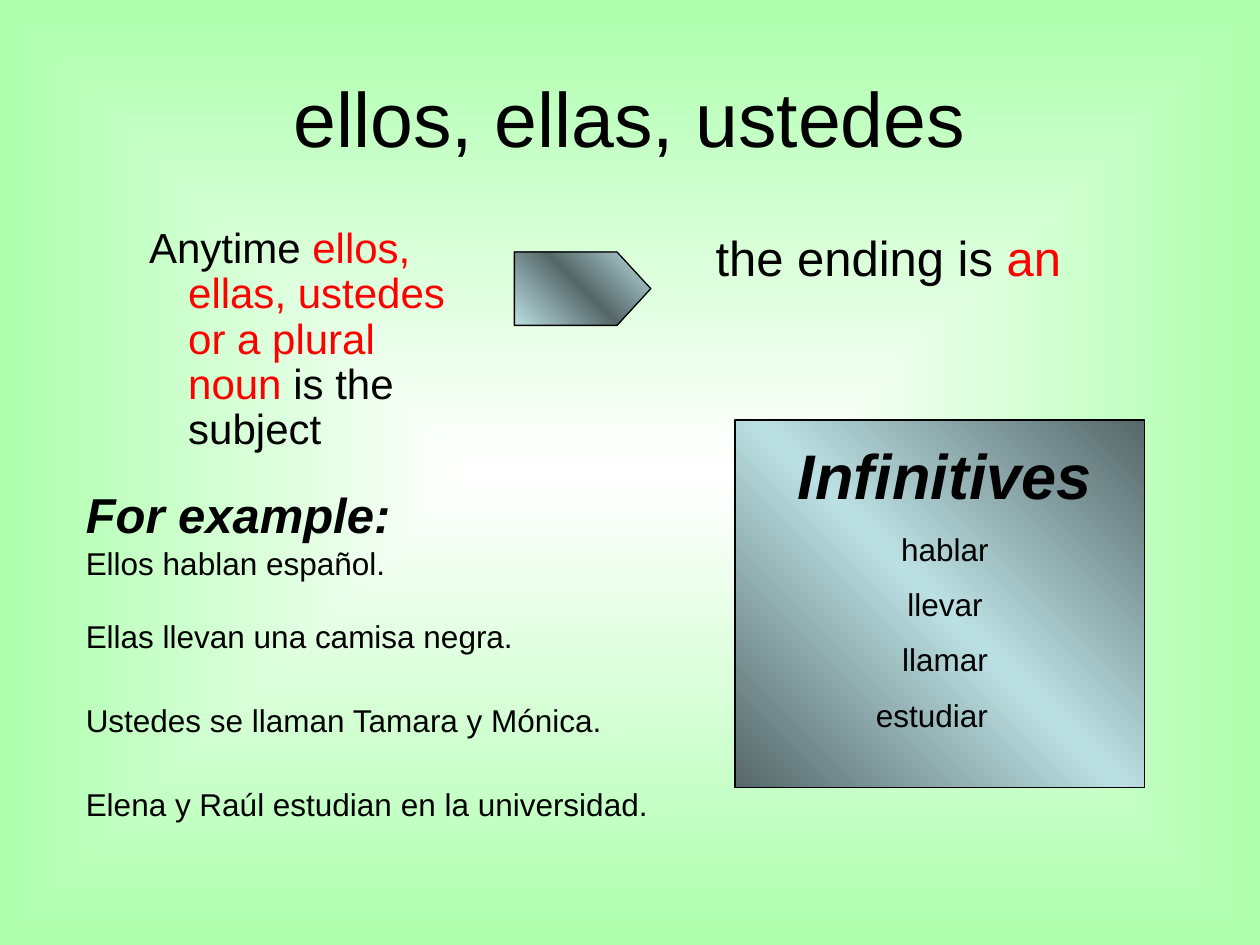
from lxml import etree
from pptx import Presentation
from pptx.dml.color import RGBColor
from pptx.enum.shapes import MSO_SHAPE
from pptx.enum.text import MSO_ANCHOR, MSO_AUTO_SIZE, PP_ALIGN
from pptx.oxml.ns import qn
from pptx.util import Cm, Pt

PENTAGON, RECT = MSO_SHAPE.PENTAGON, MSO_SHAPE.RECTANGLE
CENTER, LEFT = PP_ALIGN.CENTER, PP_ALIGN.LEFT
TOP, MIDDLE = MSO_ANCHOR.TOP, MSO_ANCHOR.MIDDLE
FIXED = MSO_AUTO_SIZE.NONE

FONT = "Arial"
BLACK, RED, WHITE, GREEN = "000000", "FF0000", "FFFFFF", "ADFFAD"
PALE, DARK = "BBE0E3", "566769"


def rgb(value):
    return RGBColor.from_string(value)


def place(shape, left, top, width, height):
    shape.left, shape.top = Cm(left), Cm(top)
    shape.width, shape.height = Cm(width), Cm(height)


def add_run(p, text, size, color=BLACK, strong=False):
    r = p.add_run()
    r.text = text
    r.font.name, r.font.size = FONT, Pt(size)
    r.font.color.rgb = rgb(color)
    r.font.bold = r.font.italic = strong


def set_gradient(fill, element, colors, from_center=False):
    """Evenly spaced stops, rising to the right or spreading from the centre."""
    fill.gradient()
    grad = element.find(".//" + qn("a:gradFill"))
    stops = grad.find(qn("a:gsLst"))
    for stop in list(stops):
        stops.remove(stop)
    for i, color in enumerate(colors):
        pos = 100000 * i // (len(colors) - 1)
        stop = etree.SubElement(stops, qn("a:gs"), pos=str(pos))
        etree.SubElement(stop, qn("a:srgbClr"), val=color)
    if from_center:
        grad.remove(grad.find(qn("a:lin")))
        shade = etree.SubElement(grad, qn("a:path"), path="rect")
        etree.SubElement(shade, qn("a:fillToRect"),
                         dict.fromkeys("ltrb", "50000"))
    else:
        fill.gradient_angle = 45


def add_panel(s, kind, box, colors):
    sp = s.shapes.add_shape(kind, *map(Cm, box))
    sp.shadow.inherit = False
    set_gradient(sp.fill, sp._element, colors)
    sp.line.color.rgb = rgb(BLACK)
    sp.line.width = Pt(0.75)
    return sp


def fill_body(sp, box, runs, size, spacing=None):
    """Body placeholder with one hanging paragraph and no bullet."""
    place(sp, *box)
    tf = sp.text_frame
    tf.auto_size, tf.vertical_anchor = FIXED, TOP
    p = tf.paragraphs[0]
    p.level = 1
    p.line_spacing = spacing
    pPr = p._p.get_or_add_pPr()
    pPr.set("marL", str(Cm(2.06)))
    pPr.set("indent", str(Cm(-0.79)))
    etree.SubElement(pPr, qn("a:buNone"))
    for text, color in runs:
        add_run(p, text, size, color)


def add_text(s, box, lines, align=LEFT, gap=0):
    """Text box; lines are (text, size, strong), with a gap between them."""
    tf = s.shapes.add_textbox(*map(Cm, box)).text_frame
    tf.word_wrap = True
    for i, line in enumerate(lines):
        p = tf.add_paragraph() if i else tf.paragraphs[0]
        p.alignment = align
        p.space_before = Pt(gap if i else 0)
        text, size, strong = line
        add_run(p, text, size, strong=strong)
    return tf


def main():
    prs = Presentation()
    prs.slide_width, prs.slide_height = Cm(25.4), Cm(19.05)
    s = prs.slides.add_slide(prs.slide_layouts[3])
    set_gradient(s.background.fill, s._element, [WHITE, GREEN], True)

    # Title
    title, rule, ending = s.placeholders
    place(title, 1.27, 0.76, 22.86, 3.18)
    title.text_frame.vertical_anchor = MIDDLE
    p = title.text_frame.paragraphs[0]
    p.alignment = CENTER
    add_run(p, "ellos, ellas, ustedes", 44)

    # Rule: subject, arrow, ending
    fill_body(rule, (1.48, 4.45, 8.26, 4.23),
              [("Anytime ", BLACK),
               ("ellos, ellas, ustedes or a plural noun", RED),
               (" is the subject", BLACK)], 24, 0.9)
    arrow = add_panel(s, PENTAGON, (10.37, 5.08, 2.75, 1.48),
                      [PALE, DARK, PALE])
    arrow.adjustments[0] = 0.46
    fill_body(ending, (12.9, 4.45, 11.23, 12.57),
              [("the ending is ", BLACK), ("an", RED)], 28)

    # Examples
    add_text(s, (1.48, 9.65, 19.48, 2.21),
             [("For example:", 28, True), ("Ellos hablan español.", 18, False)])
    sentences = ["Ellas llevan una camisa negra.",
                 "Ustedes se llaman Tamara y Mónica.",
                 "Elena y Raúl estudian en la universidad."]
    for i, text in enumerate(sentences):
        add_text(s, (1.48, 12.32 + 1.69 * i, 20, 1.02), [(text, 18, False)])

    # Infinitives
    add_panel(s, RECT, (14.82, 8.47, 8.26, 7.41), [DARK, PALE, DARK])
    verbs = ["hablar", "llevar", "llamar", "estudiar"]
    tf = add_text(s, (15.45, 8.68, 7.2, 6.38),
                  [("Infinitives", 36, True)] + [(v, 18, False) for v in verbs],
                  CENTER, 10)
    # The last verb sits a little left of centre
    tf.paragraphs[-1]._p.get_or_add_pPr().set("marR", str(Cm(0.53)))

    prs.save("out.pptx")


if __name__ == "__main__":
    main()
